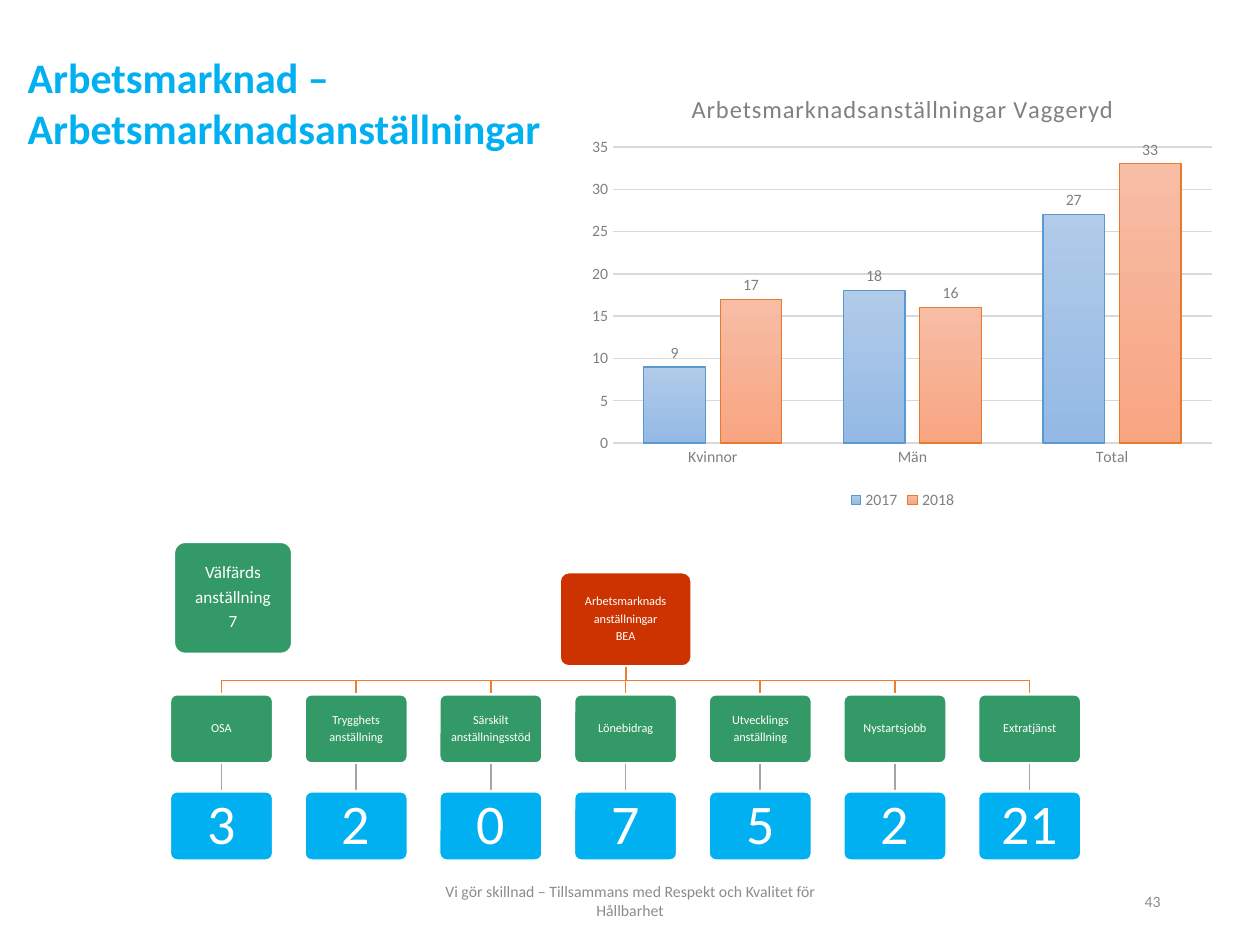
from dataclasses import dataclass

from lxml import etree
from pptx import Presentation
from pptx.chart.data import CategoryChartData
from pptx.dml.color import RGBColor
from pptx.enum.chart import XL_CHART_TYPE, XL_LABEL_POSITION, XL_LEGEND_POSITION, XL_TICK_MARK
from pptx.enum.shapes import MSO_CONNECTOR, MSO_SHAPE
from pptx.enum.text import MSO_ANCHOR, MSO_AUTO_SIZE, PP_ALIGN
from pptx.oxml import parse_xml
from pptx.oxml.ns import nsdecls, qn
from pptx.util import Inches, Pt

COLUMN = XL_CHART_TYPE.COLUMN_CLUSTERED
OUTSIDE_END = XL_LABEL_POSITION.OUTSIDE_END
BOTTOM = XL_LEGEND_POSITION.BOTTOM
NO_TICK = XL_TICK_MARK.NONE
STRAIGHT = MSO_CONNECTOR.STRAIGHT
ROUNDED = MSO_SHAPE.ROUNDED_RECTANGLE
TOP, MIDDLE = MSO_ANCHOR.TOP, MSO_ANCHOR.MIDDLE
NO_AUTOFIT = MSO_AUTO_SIZE.NONE
LEFT, CENTER, RIGHT = PP_ALIGN.LEFT, PP_ALIGN.CENTER, PP_ALIGN.RIGHT
COLS, ROWS = 100, 75


@dataclass(frozen=True)
class Theme:
    """Font, colours and type sizes of the slide."""
    font: str = "Calibri"
    white: str = "FFFFFF"
    blue: str = "00B0F0"
    green: str = "339966"
    red: str = "CC3300"
    orange: str = "ED7D31"
    link: str = "A5A5A5"
    grid: str = "D9D9D9"
    chart_text: str = "808080"
    footer: str = "8C8C8C"
    bars: tuple = (("B1CBE9", "93B9E4", "5998D0"), ("F7BDA5", "F8A582", "E87A30"))
    title_size: float = 24
    chart_title_size: float = 14
    small_size: float = 9
    node_size: float = 7
    welfare_size: float = 9.8
    count_size: float = 32


class Deck:
    """Holds the theme and the current slide and draws on a 100 by 75 grid."""

    def __init__(self, theme):
        self.theme = theme
        self.prs = Presentation()
        self.prs.slide_width, self.prs.slide_height = Inches(10), Inches(7.5)

    def x(self, cols):
        """Turn grid columns into a length."""
        return int(self.prs.slide_width * cols / COLS)

    def y(self, rows):
        """Turn grid rows into a length."""
        return int(self.prs.slide_height * rows / ROWS)

    def box(self, left, top, width, height):
        """Turn a grid box into slide lengths."""
        return self.x(left), self.y(top), self.x(width), self.y(height)

    def font(self, font, size, color, bold=False):
        """Apply the theme font with a size and colour."""
        font.name, font.size, font.bold = self.theme.font, Pt(size), bold
        font.color.rgb = RGBColor.from_string(color)

    def stroke(self, line, color, width):
        """Give a line its colour and width."""
        line.color.rgb = RGBColor.from_string(color)
        line.width = Pt(width)

    def fill_text(self, tf, text, size, color, align, anchor=MIDDLE, bold=False):
        """Fill a text frame, one paragraph a line."""
        tf.text, tf.word_wrap, tf.vertical_anchor = text, True, anchor
        for p in tf.paragraphs:
            p.alignment = align
            for r in p.runs:
                self.font(r.font, size, color, bold)

    def title(self, text, *box):
        """Add a slide with a placed and formatted title."""
        self.slide = self.prs.slides.add_slide(self.prs.slide_layouts[5])
        sp = self.slide.shapes.title
        sp.left, sp.top, sp.width, sp.height = self.box(*box)
        self.fill_text(sp.text_frame, text, self.theme.title_size, self.theme.blue,
                       LEFT, TOP, True)
        sp.text_frame.auto_size = NO_AUTOFIT

    def text(self, text, align, *box):
        """Add a footer text."""
        sp = self.slide.shapes.add_textbox(*self.box(*box))
        self.fill_text(sp.text_frame, text, self.theme.small_size, self.theme.footer, align)

    def node(self, text, fill, size, *box):
        """Add a rounded box with centred text."""
        sp = self.slide.shapes.add_shape(ROUNDED, *self.box(*box))
        sp.adjustments[0] = 0.1
        sp.shadow.inherit = False
        sp.fill.solid()
        sp.fill.fore_color.rgb = RGBColor.from_string(fill)
        self.stroke(sp.line, self.theme.white, 1.5)
        tf = sp.text_frame
        tf.margin_left = tf.margin_right = tf.margin_top = tf.margin_bottom = Inches(0.03)
        self.fill_text(tf, text, size, self.theme.white, CENTER)
        for p in tf.paragraphs:
            p.line_spacing, p.space_after = 0.9, Pt(0.35 * size)

    def link(self, x, top, bottom, color):
        """Add a vertical connector."""
        sp = self.slide.shapes.add_connector(
            STRAIGHT, self.x(x), self.y(top), self.x(x), self.y(bottom))
        self.stroke(sp.line, color, 1)
        etree.SubElement(sp._element.spPr, qn("a:effectLst"))

    def branch(self, start, end, top, bottom, color):
        """Add a stepped branch from a parent to a child."""
        if start == end:
            return self.link(start, top, bottom, color)
        mid = self.y((top + bottom) / 2)
        fb = self.slide.shapes.build_freeform(self.x(start), self.y(top))
        fb.add_line_segments([(self.x(start), mid), (self.x(end), mid),
                              (self.x(end), self.y(bottom))], close=False)
        sp = fb.convert_to_shape()
        sp.fill.background()
        sp.shadow.inherit = False
        self.stroke(sp.line, color, 1)

    def chart(self, title, cats, series, *box):
        """Add a clustered column chart with gradient bars."""
        t = self.theme
        data = CategoryChartData()
        data.categories = cats
        for name, values in series.items():
            data.add_series(name, values)
        chart = self.slide.shapes.add_chart(COLUMN, *self.box(*box), data).chart
        self.font(chart.font, t.small_size, t.chart_text)
        chart.has_title = True
        chart.chart_title.include_in_layout = False
        tf = chart.chart_title.text_frame
        tf.text = title
        r = tf.paragraphs[0].runs[0]
        self.font(r.font, t.chart_title_size, t.chart_text)
        r.font._element.set("spc", "40")
        chart.has_legend = True
        chart.legend.position, chart.legend.include_in_layout = BOTTOM, False
        self.font(chart.legend.font, t.small_size, t.chart_text)
        for axis in (chart.category_axis, chart.value_axis):
            axis.major_tick_mark = axis.minor_tick_mark = NO_TICK
            self.font(axis.tick_labels.font, t.small_size, t.chart_text)
        self.stroke(chart.category_axis.format.line, t.grid, 0.75)
        axis = chart.value_axis
        axis.minimum_scale, axis.maximum_scale, axis.major_unit = 0, 35, 5
        axis.format.line.fill.background()
        self.stroke(axis.major_gridlines.format.line, t.grid, 0.75)
        plot = chart.plots[0]
        plot.gap_width, plot.overlap, plot.vary_by_categories = 100, -24, False
        for ser, (light, dark, edge) in zip(plot.series, t.bars):
            fill = ser.format.fill
            fill.gradient()
            fill.gradient_angle = 270
            for stop, color, position in zip(fill.gradient_stops, (light, dark), (0, 1)):
                stop.color.rgb, stop.position = RGBColor.from_string(color), position
            self.stroke(ser.format.line, edge, 0.75)
            labels = ser.data_labels
            labels.show_value, labels.position = True, OUTSIDE_END
            self.font(labels.font, t.small_size, t.chart_text)
        self.place_plot(chart, x=0.05, y=0.17, w=0.93, h=0.67)

    def place_plot(self, chart, **shares):
        """Set the inner plot area as shares of the chart."""
        area = chart._chartSpace.chart.plotArea
        for old in area.findall(qn("c:layout")):
            area.remove(old)
        parts = "".join(f'<c:{k} val="{v}"/>' for k, v in shares.items())
        area.insert(0, parse_xml(
            f'<c:layout {nsdecls("c")}><c:manualLayout><c:layoutTarget val="inner"/>'
            f'<c:xMode val="edge"/><c:yMode val="edge"/>{parts}</c:manualLayout></c:layout>'))


def main():
    """Build and save the slide."""
    t = Theme()
    deck = Deck(t)
    deck.title("Arbetsmarknad – Arbetsmarknadsanställningar", 1.2, 3.6, 44.9, 9.1)
    jobs = [("OSA", 3), ("Trygghets\nanställning", 2), ("Särskilt\nanställningsstöd", 0),
            ("Lönebidrag", 7), ("Utvecklings\nanställning", 5), ("Nystartsjobb", 2),
            ("Extratjänst", 21)]
    center, pitch, width, height = 49.65, 10.69, 8.2, 5.5
    deck.node("Arbetsmarknads\nanställningar\nBEA", t.red, t.node_size, 44.4, 45.4, 10.5, 7.5)
    for i, (name, count) in enumerate(jobs):
        x = center + (i - len(jobs) // 2) * pitch
        deck.branch(center, x, 52.9, 55.1, t.orange)
        deck.node(name, t.green, t.node_size, x - width / 2, 55.1, width, height)
        deck.link(x, 60.6, 62.8, t.link)
        deck.node(str(count), t.blue, t.count_size, x - width / 2, 62.8, width, height)
    deck.node("Välfärds\nanställning\n7", t.green, t.welfare_size, 13.8, 43, 9.4, 8.9)
    deck.chart("Arbetsmarknadsanställningar Vaggeryd", ["Kvinnor", "Män", "Total"],
               {"2017": (9, 18, 27), "2018": (17, 16, 33)}, 46.1, 5.7, 51.1, 35.1)
    deck.text("Vi gör skillnad – Tillsammans med Respekt och Kvalitet för Hållbarhet",
              CENTER, 33.1, 69.5, 33.8, 4)
    deck.text("43", RIGHT, 70.6, 69.5, 22.5, 4)
    deck.prs.save("out.pptx")


if __name__ == "__main__":
    main()
